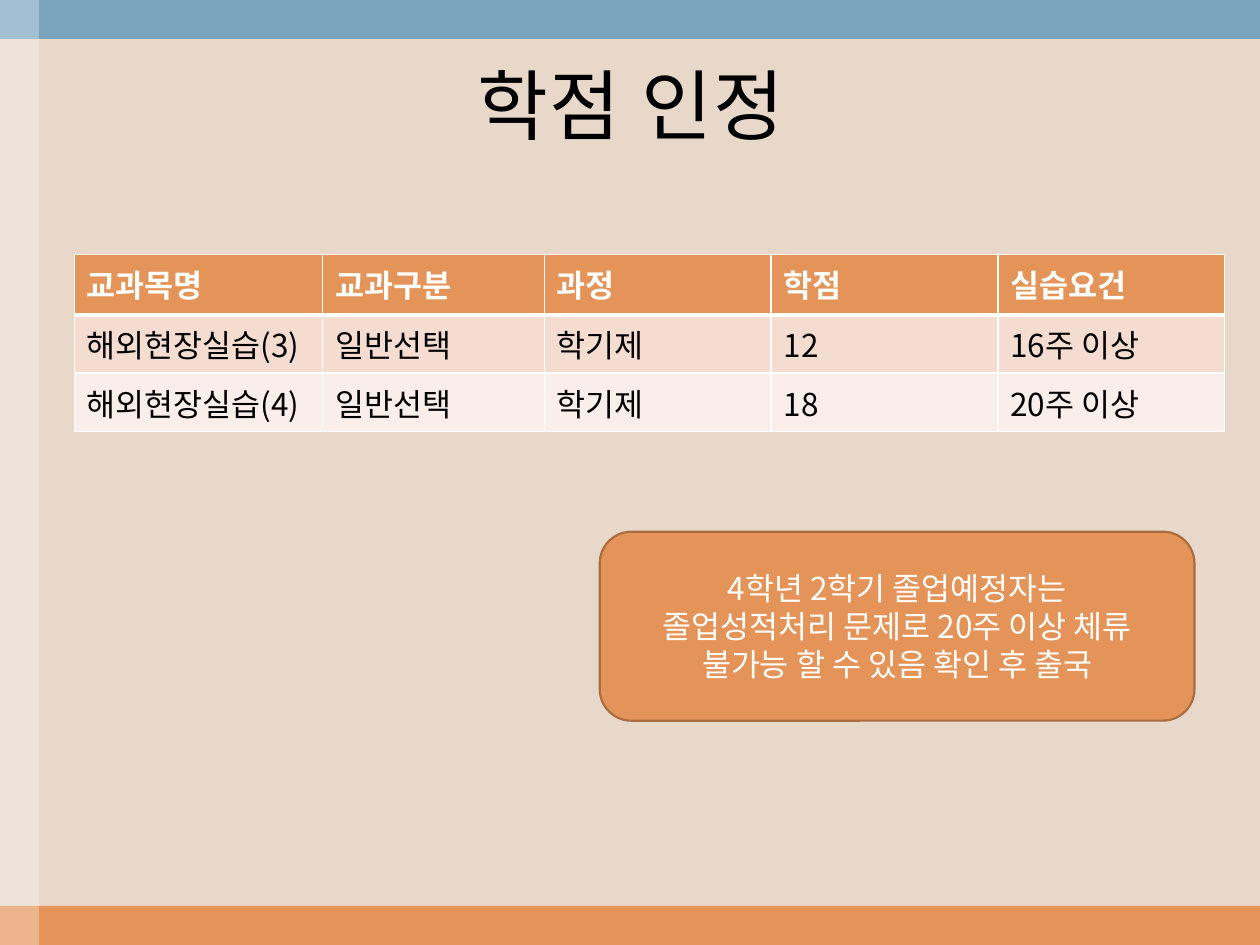
from typing import NamedTuple, Optional

from lxml.etree import SubElement as Sub
from pptx import Presentation
from pptx.dml.color import RGBColor as Rgb
from pptx.enum.shapes import MSO_SHAPE as Kind
from pptx.enum.text import MSO_ANCHOR as Anchor, PP_ALIGN as Align
from pptx.oxml.ns import qn
from pptx.util import Inches, Pt

WIDE, HIGH = 10, 7.5
BAND = 0.31
FONT = "Noto Sans CJK KR"
SAND = Rgb(0xE8, 0xD8, 0xCA)
ORANGE = Rgb(0xE4, 0x94, 0x58)
BROWN = Rgb(0xA9, 0x6D, 0x41)
BLUE = Rgb(0x7B, 0xA5, 0xBE)
PEACH = Rgb(0xF5, 0xDC, 0xD1)
PALE = Rgb(0xFA, 0xEE, 0xEA)
WHITE = Rgb(0xFF, 0xFF, 0xFF)
BLACK = Rgb(0, 0, 0)


class Box(NamedTuple):
    left: float
    top: float
    width: float
    height: float

    def emu(self) -> list:
        return [Inches(side) for side in self]


class Bar(NamedTuple):
    box: Box
    color: Rgb
    alpha: Optional[int] = None


class Row(NamedTuple):
    height: float
    fill: Rgb
    ink: Rgb
    bold: bool
    cells: tuple


BARS = (
    Bar(Box(0, HIGH - BAND, WIDE, BAND), ORANGE),
    Bar(Box(0, 0, WIDE, BAND), BLUE),
    Bar(Box(0, 0, BAND, HIGH), WHITE, 30),
)
COLS = (1.97, 1.76, 1.8, 1.8, 1.8)
ROWS = (
    Row(0.48, ORANGE, WHITE, True,
        ("교과목명", "교과구분", "과정", "학점", "실습요건")),
    Row(0.41, PEACH, BLACK, False,
        ("해외현장실습(3)", "일반선택", "학기제", "12", "16주 이상")),
    Row(0.41, PALE, BLACK, False,
        ("해외현장실습(4)", "일반선택", "학기제", "18", "20주 이상")),
)
NOTE = ("4학년 2학기 졸업예정자는\v졸업성적처리 문제로 20주 이상 체류\v"
        "불가능 할 수 있음 확인 후 출국")


def write(frame, text: str, size: float, ink: Rgb, bold: bool = False,
          align: Align = Align.LEFT, gap: int = 0) -> None:
    frame.text = text
    for para in frame.paragraphs:
        para.alignment = align
        for run in para.runs:
            font = run.font
            font.size, font.bold, font.name = Pt(size), bold, FONT
            font.color.rgb = ink
            props = run._r.get_or_add_rPr()
            Sub(props, qn("a:ea")).set("typeface", FONT)
            if gap:
                props.set("spc", str(gap))


def add_bar(slide, bar: Bar) -> None:
    shape = slide.shapes.add_shape(Kind.RECTANGLE, *bar.box.emu())
    shape.shadow.inherit = False
    shape.fill.solid()
    shape.fill.fore_color.rgb = bar.color
    shape.line.fill.background()
    if bar.alpha is not None:
        tint = shape._element.spPr.find(".//" + qn("a:srgbClr"))
        Sub(tint, qn("a:alpha")).set("val", str(bar.alpha * 1000))


def edge(cell, widths: dict) -> None:
    props = cell._tc.get_or_add_tcPr()
    for spot, (side, width) in enumerate(widths.items()):
        line = Sub(props, qn("a:" + side), w=str(Pt(width)))
        fill = Sub(line, qn("a:solidFill"))
        Sub(fill, qn("a:srgbClr")).set("val", str(WHITE))
        props.insert(spot, line)


def add_grid(slide, left: float, top: float) -> None:
    box = Box(left, top, sum(COLS), sum(row.height for row in ROWS))
    grid = slide.shapes.add_table(len(ROWS), len(COLS), *box.emu()).table
    for col, width in zip(grid.columns, COLS):
        col.width = Inches(width)
    for r, row in enumerate(ROWS):
        grid.rows[r].height = Inches(row.height)
        for c, text in enumerate(row.cells):
            cell = grid.cell(r, c)
            write(cell.text_frame, text, 18, row.ink, row.bold)
            cell.fill.solid()
            cell.fill.fore_color.rgb = row.fill
            edge(cell, {"lnL": 1, "lnR": 1, "lnT": 3 if r == 1 else 1,
                        "lnB": 3 if r == 0 else 1})


def add_note(slide, box: Box) -> None:
    shape = slide.shapes.add_shape(Kind.ROUNDED_RECTANGLE, *box.emu())
    shape.shadow.inherit = False
    shape.fill.solid()
    shape.fill.fore_color.rgb = ORANGE
    shape.line.color.rgb = BROWN
    shape.line.width = Pt(1.25)
    frame = shape.text_frame
    frame.word_wrap = True
    frame.vertical_anchor = Anchor.MIDDLE
    write(frame, NOTE, 18, WHITE, align=Align.CENTER)


def set_title(slide, box: Box) -> None:
    title = slide.shapes.title
    title.left, title.top, title.width, title.height = box.emu()
    title.text_frame.vertical_anchor = Anchor.MIDDLE
    write(title.text_frame, "학점 인정", 44, BLACK, align=Align.CENTER, gap=100)


def main() -> None:
    deck = Presentation()
    deck.slide_width, deck.slide_height = Inches(WIDE), Inches(HIGH)
    slide = deck.slides.add_slide(deck.slide_layouts[5])
    slide.background.fill.solid()
    slide.background.fill.fore_color.rgb = SAND
    for bar in BARS:
        add_bar(slide, bar)
    set_title(slide, Box(0.33, BAND, 9.36, 1.03))
    add_grid(slide, 0.59, 2.02)
    add_note(slide, Box(4.76, 4.22, 4.72, 1.5))
    deck.save("out.pptx")


if __name__ == "__main__":
    main()
